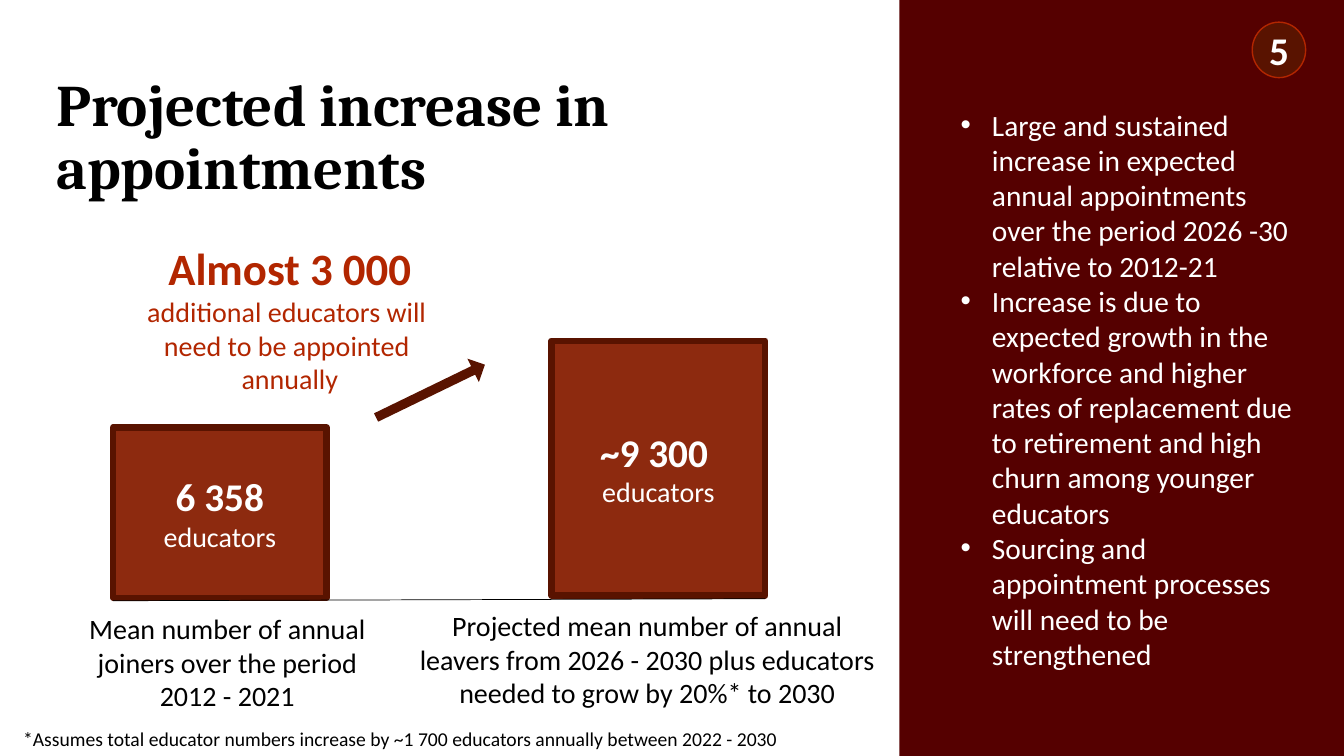
import pptx
import pptx.dml.color
import pptx.enum.shapes
import pptx.enum.text
import pptx.oxml
import pptx.oxml.ns
import pptx.util
from pptx.util import Inches

SHAPES = pptx.enum.shapes.MSO_SHAPE
ALIGN = pptx.enum.text.PP_ALIGN
ANCHOR = pptx.enum.text.MSO_ANCHOR

# Content
TITLE = "Projected increase in appointments"
CALLOUT_HEAD = "Almost 3 000"
CALLOUT_LINES = ["additional educators will ", "need to be appointed ", "annually"]
UNIT = "educators"
BARS = [  # value, bar (left, top, height), caption, caption box
    ("6 358", (1.12, 4.24, 1.69),
     "Mean number of annual joiners over the period 2012 - 2021",
     (0.6, 6.02, 3.31, 1.06)),
    ("~9 300 ", (5.47, 3.38, 2.53),
     "Projected mean number of annual leavers from 2026 - 2030 plus "
     "educators needed to grow by 20%* to 2030",
     (4.05, 5.99, 4.74, 1.06)),
]
BAR_WIDTH = 2.12
POINTS = [
    "Large and sustained increase in expected annual appointments over the "
    "period 2026 -30 relative to 2012-21",
    "Increase is due to expected growth in the workforce and higher rates of "
    "replacement due to retirement and high churn among younger educators",
    "Sourcing and appointment processes will need to be strengthened",
]
FOOTNOTE = ("*Assumes total educator numbers increase by ~1 700 educators "
            "annually between 2022 - 2030")
PAGE = "5"

THEME = {
    "heading_font": "Cambria", "body_font": "Calibri",
    "black": "000000", "white": "FFFFFF", "panel": "550000",
    "bar": "861D00", "dark": "591300", "accent": "B22600",
    "title": 42, "callout": 32, "value": 28, "points": 21, "body": 20, "note": 14,
}

deck = pptx.Presentation()
deck.slide_width, deck.slide_height = Inches(13.33), Inches(7.5)
slide = deck.slides.add_slide(deck.slide_layouts[6])


def color(name):
    return pptx.dml.color.RGBColor.from_string(THEME[name])


def add_block(kind, box, fill, line=None, line_width=1):
    block = slide.shapes.add_shape(kind, *map(Inches, box))
    block.shadow.inherit = False
    block.fill.solid()
    block.fill.fore_color.rgb = color(fill)
    if line:
        block.line.color.rgb = color(line)
        block.line.width = pptx.util.Pt(line_width)
    else:
        block.line.fill.background()
    return block


def add_box(box):
    return slide.shapes.add_textbox(*map(Inches, box))


def write(holder, lines, size="body", ink="black", font="body_font", bold=False,
          lead=None, align=ALIGN.CENTER, anchor=ANCHOR.TOP, wrap=True,
          spacing=None, bullet=None, inset=None):
    """Fill holder with paragraphs; lead is the size of a bold first line."""
    frame = holder.text_frame
    frame.word_wrap, frame.vertical_anchor = wrap, anchor
    if inset is not None:
        frame.margin_left = frame.margin_right = Inches(inset)
        frame.margin_top = frame.margin_bottom = Inches(inset)
    for i, line in enumerate(lines):
        para = frame.paragraphs[0] if i == 0 else frame.add_paragraph()
        para.alignment, para.line_spacing = align, spacing
        run = para.add_run()
        run.text = line
        is_lead = lead is not None and i == 0
        run.font.size = pptx.util.Pt(THEME[lead if is_lead else size])
        run.font.bold = bold or is_lead
        run.font.name = THEME[font]
        run.font.color.rgb = color(ink)
        if bullet:
            props = para._p.get_or_add_pPr()
            props.set("marL", str(Inches(0.31)))
            props.set("indent", str(-Inches(0.31)))
            for tag, key, value in (("buFont", "typeface", "Arial"),
                                    ("buChar", "char", bullet)):
                props.append(pptx.oxml.parse_xml(
                    f'<a:{tag} {pptx.oxml.ns.nsdecls("a")} {key}="{value}"/>'))


# Side panel, title and callout
add_block(SHAPES.RECTANGLE, (8.92, 0, 4.42, 7.5), "panel")
write(add_box((0.46, 0.86, 7.96, 1.04)), [TITLE], size="title", bold=True,
      font="heading_font", align=ALIGN.LEFT, anchor=ANCHOR.MIDDLE, spacing=0.9)
write(add_box((1.2, 2.35, 3.35, 1.61)), [CALLOUT_HEAD] + CALLOUT_LINES,
      lead="callout", ink="accent", anchor=ANCHOR.MIDDLE, wrap=False)

# Key points
write(add_box((9.43, 1.01, 3.52, 5.84)), POINTS, size="points", ink="white",
      align=ALIGN.LEFT, bullet="•")

# Bars with captions
for value, (left, top, height), caption, caption_box in BARS:
    bar = add_block(SHAPES.RECTANGLE, (left, top, BAR_WIDTH, height),
                    "bar", "dark", 4.5)
    bar_color = bar.fill._xPr.find(".//" + pptx.oxml.ns.qn("a:srgbClr"))
    bar_color.append(pptx.oxml.parse_xml(
        f'<a:alpha {pptx.oxml.ns.nsdecls("a")} val="94000"/>'))
    write(bar, [value, UNIT], lead="value", ink="white",
          anchor=ANCHOR.MIDDLE, wrap=False)
    write(add_box(caption_box), [caption])

# Rising arrow and baseline
arrow = add_block(SHAPES.RIGHT_ARROW, (3.67, 3.75, 1.2, 0.26), "dark")
arrow.adjustments[0], arrow.adjustments[1] = 0.356, 0.5
arrow.rotation = 334.1
baseline = slide.shapes.add_connector(
    pptx.enum.shapes.MSO_CONNECTOR.STRAIGHT,
    *map(Inches, (1.12, 5.96, 7.59, 5.94)))
baseline.line.color.rgb = color("black")
baseline.line.width = pptx.util.Pt(0.5)
baseline._element.spPr.append(pptx.oxml.parse_xml(
    f'<a:effectLst {pptx.oxml.ns.nsdecls("a")}/>'))

# Page badge and footnote
badge = add_block(SHAPES.OVAL, (12.42, 0.22, 0.53, 0.55), "dark", "accent")
write(badge, [PAGE], size="value", ink="white", bold=True,
      anchor=ANCHOR.MIDDLE, inset=0)
write(add_box((0.13, 7.19, 8.29, 0.27)), [FOOTNOTE], size="note",
      align=ALIGN.LEFT, anchor=ANCHOR.MIDDLE)

deck.save("out.pptx")
